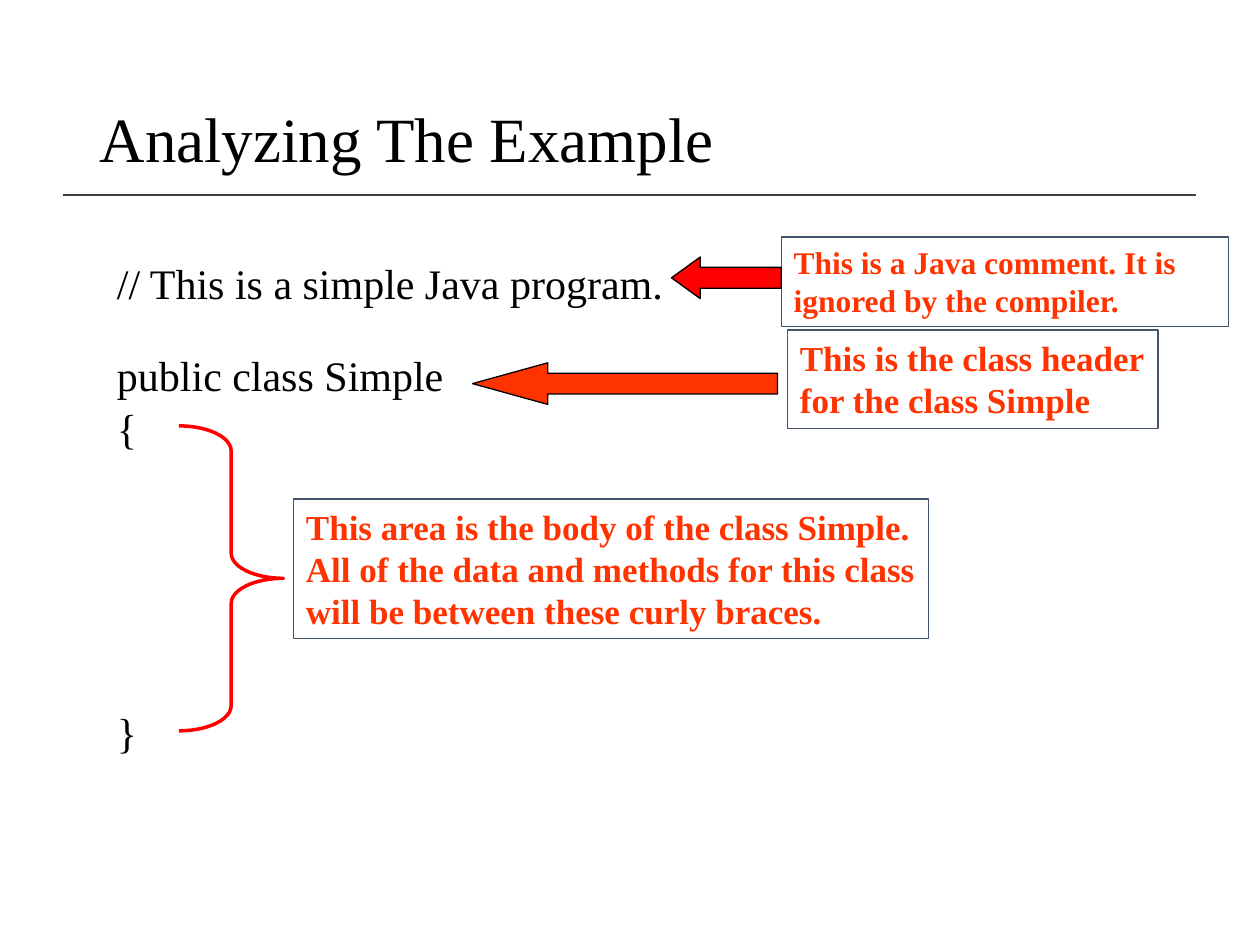
"""Build a slide that explains the parts of a simple Java class."""
import dataclasses

import pptx
import pptx.dml.color
import pptx.enum.shapes
import pptx.enum.text
import pptx.oxml.ns
import pptx.util
from lxml import etree

Inches = pptx.util.Inches
Pt = pptx.util.Pt
Shape = pptx.enum.shapes.MSO_SHAPE


@dataclasses.dataclass(frozen=True)
class Theme:
    font: str = "Times New Roman"
    ink: str = "000000"
    rule: str = "404040"
    border: str = "44546A"
    note: str = "FF3300"
    red: str = "FF0000"
    title_size: float = 36
    code_size: float = 24
    note_size: float = 20
    small_note_size: float = 18
    thin: float = 0.75


THEME = Theme()


def rgb(value):
    return pptx.dml.color.RGBColor.from_string(value)


def format_text(frame, paragraphs, size, color, bold=False, wrap=True):
    frame.word_wrap = wrap
    frame.auto_size = pptx.enum.text.MSO_AUTO_SIZE.NONE
    frame.text = "\n".join(paragraphs)
    for paragraph in frame.paragraphs:
        paragraph.alignment = pptx.enum.text.PP_ALIGN.LEFT
        paragraph.font.name = THEME.font
        paragraph.font.size = Pt(size)
        paragraph.font.bold = bold
        paragraph.font.color.rgb = rgb(color)


def add_title(slide, text):
    title = slide.shapes.title
    title.left, title.top = Inches(0.69), Inches(0.4)
    title.width, title.height = Inches(8.62), Inches(1.45)
    format_text(title.text_frame, [text], THEME.title_size, THEME.ink)
    title.text_frame.vertical_anchor = pptx.enum.text.MSO_ANCHOR.MIDDLE
    title.text_frame.paragraphs[0].line_spacing = 0.9


def add_rule(slide, left, right, top):
    rule = slide.shapes.add_connector(
        pptx.enum.shapes.MSO_CONNECTOR.STRAIGHT,
        Inches(left), Inches(top), Inches(right), Inches(top))
    rule.line.color.rgb = rgb(THEME.rule)
    rule.line.width = Pt(1)
    etree.SubElement(rule._element.spPr, pptx.oxml.ns.qn("a:effectLst"))


def add_code(slide, box, lines):
    shape = slide.shapes.add_textbox(*map(Inches, box))
    format_text(shape.text_frame, lines, THEME.code_size, THEME.ink, wrap=False)
    for paragraph in shape.text_frame.paragraphs:
        paragraph.line_spacing = 1.04
    return shape.text_frame.paragraphs


def add_shape(group, kind, box, line, width, fill=None, adjustments=()):
    shape = group.shapes.add_shape(kind, *map(Inches, box))
    shape.shadow.inherit = False
    shape.line.color.rgb = rgb(line)
    shape.line.width = Pt(width)
    if fill:
        shape.fill.solid()
        shape.fill.fore_color.rgb = rgb(fill)
    else:
        shape.fill.background()
    for index, value in enumerate(adjustments):
        shape.adjustments[index] = value
    return shape


def add_note(group, box, paragraphs, size=THEME.note_size, wrap=False):
    shape = add_shape(group, Shape.RECTANGLE, box, THEME.border, THEME.thin)
    shape.text_frame.vertical_anchor = pptx.enum.text.MSO_ANCHOR.TOP
    format_text(shape.text_frame, paragraphs, size, THEME.note, True, wrap)


def add_arrow(group, box, fill, head):
    add_shape(group, Shape.LEFT_ARROW, box, THEME.ink, THEME.thin, fill, (0.5, head))


def main():
    presentation = pptx.Presentation()
    presentation.slide_width, presentation.slide_height = Inches(10), Inches(7.5)
    slide = presentation.slides.add_slide(presentation.slide_layouts[5])
    add_title(slide, "Analyzing The Example")
    add_rule(slide, 0.5, 9.49, 1.55)

    code = add_code(slide, (0.83, 2.71, 3.25, 3.38), ["public class Simple", "{", "}"])
    code[-1].space_before = Pt(144)

    body = slide.shapes.add_group_shape()
    add_note(body, (2.33, 3.96, 5.04, 1.11), [
        "This area is the body of the class Simple.",
        "All of the data and methods for this class\vwill be between these curly braces."])
    add_shape(body, Shape.RIGHT_BRACE, (1.42, 3.38, 0.83, 2.42), THEME.red, 2,
              adjustments=(0.24, 0.5))

    add_code(slide, (0.83, 1.98, 4.54, 0.58), ["// This is a simple Java program."])
    comment = slide.shapes.add_group_shape()
    add_note(comment, (6.2, 1.88, 3.55, 0.71),
             ["This is a Java comment. It is ignored by the compiler."],
             THEME.small_note_size, wrap=True)
    add_arrow(comment, (5.33, 2.04, 0.87, 0.33), THEME.red, 0.69)

    header = slide.shapes.add_group_shape()
    add_note(header, (6.25, 2.62, 2.94, 0.78),
             ["This is the class header\vfor the class Simple"])
    add_arrow(header, (3.75, 2.88, 2.42, 0.33), THEME.note, 1.81)

    presentation.save("out.pptx")


if __name__ == "__main__":
    main()
